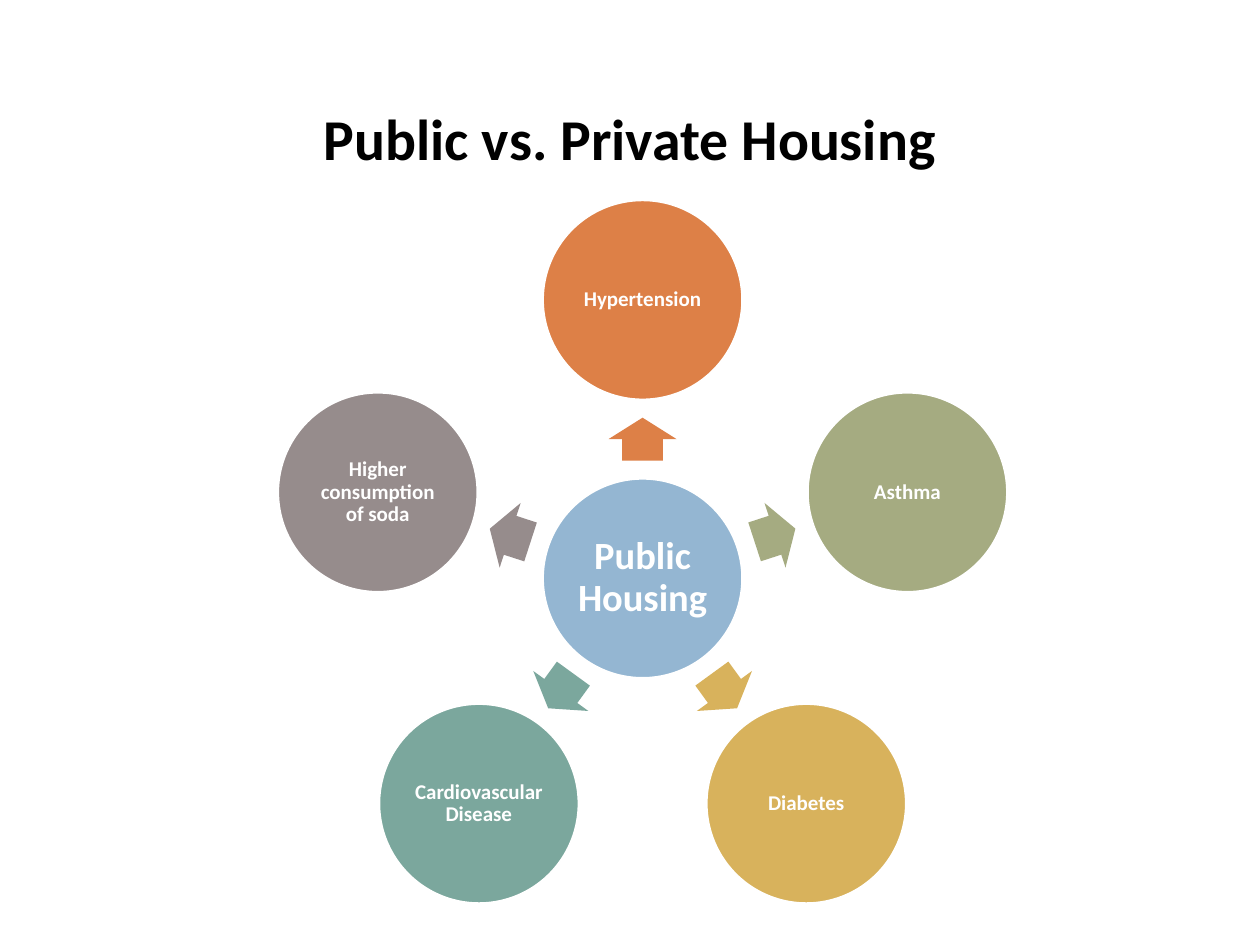
from math import cos, radians, sin

from pptx import Presentation
from pptx.dml.color import RGBColor
from pptx.enum.shapes import MSO_SHAPE
from pptx.enum.text import MSO_ANCHOR, MSO_AUTO_SIZE, PP_ALIGN
from pptx.util import Inches, Pt

WIDE, HIGH = Inches(10), Inches(7.5)

# Lengths are percent of the slide's width.
HUB = (51, 45.9)
DISC = 15.8
RING = 22.1
ARROW = (3.4, 5.4)

EFFECTS = [
    ("Hypertension", "DD8047"),
    ("Asthma", "A5AB81"),
    ("Diabetes", "D8B25C"),
    ("Cardiovascular Disease", "7BA79D"),
    ("Higher consumption of soda", "968C8C"),
]


def share(part):
    return round(WIDE * part / 100)


def color(code):
    return RGBColor.from_string(code)


def assign(item, values):
    for name, value in values.items():
        setattr(item, name, value)


def write(shape, text, size, code, inset):
    frame = shape.text_frame
    margins = {f"margin_{side}": Inches(inset) for side in ("left", "right", "top", "bottom")}
    assign(frame, {"text": text, "word_wrap": True, "auto_size": MSO_AUTO_SIZE.NONE,
                   "vertical_anchor": MSO_ANCHOR.MIDDLE, **margins})
    line = frame.paragraphs[0]
    assign(line, {"alignment": PP_ALIGN.CENTER, "line_spacing": 0.9})
    font = line.runs[0].font
    assign(font, {"name": "Calibri", "size": Pt(size), "bold": True})
    font.color.rgb = color(code)


def orbit(angle, reach):
    """Return the point at a distance from the hub, clockwise from the right."""
    turn = radians(angle)
    return HUB[0] + reach * cos(turn), HUB[1] + reach * sin(turn)


def add_form(group, kind, center, size, code):
    """Add a filled preset shape around its center."""
    corner = [share(mid - span / 2) for mid, span in zip(center, size)]
    shape = group.shapes.add_shape(kind, *corner, *map(share, size))
    shape.shadow.inherit = False
    shape.fill.solid()
    shape.fill.fore_color.rgb = color(code)
    return shape


def add_disc(group, center, text, code, size, inset):
    disc = add_form(group, MSO_SHAPE.OVAL, center, (DISC, DISC), code)
    disc.line.color.rgb = color("FFFFFF")
    disc.line.width = Pt(1)
    write(disc, text, size, "FFFFFF", inset)


def add_arrow(group, angle, code):
    arrow = add_form(group, MSO_SHAPE.RIGHT_ARROW, orbit(angle, RING / 2), ARROW, code)
    arrow.line.fill.background()
    arrow.rotation = angle % 360
    arrow.adjustments[0] = 0.6
    arrow.adjustments[1] = 0.5


def add_title(slide, text):
    title = slide.shapes.title
    assign(title, {"left": share(6.9), "top": share(4),
                   "width": share(86.2), "height": share(14.5)})
    write(title, text, 33, "000000", 0.1)


def main():
    deck = Presentation()
    assign(deck, {"slide_width": WIDE, "slide_height": HIGH})
    slide = deck.slides.add_slide(deck.slide_layouts[5])
    add_title(slide, "Public vs. Private Housing")

    wheel = slide.shapes.add_group_shape()
    add_disc(wheel, HUB, "Public Housing", "94B6D2", 22, 0.03)
    for step, (text, code) in enumerate(EFFECTS):
        angle = step * 360 / len(EFFECTS) - 90
        add_arrow(wheel, angle, code)
        add_disc(wheel, orbit(angle, RING), text, code, 12, 0.02)

    deck.save("out.pptx")


if __name__ == "__main__":
    main()
